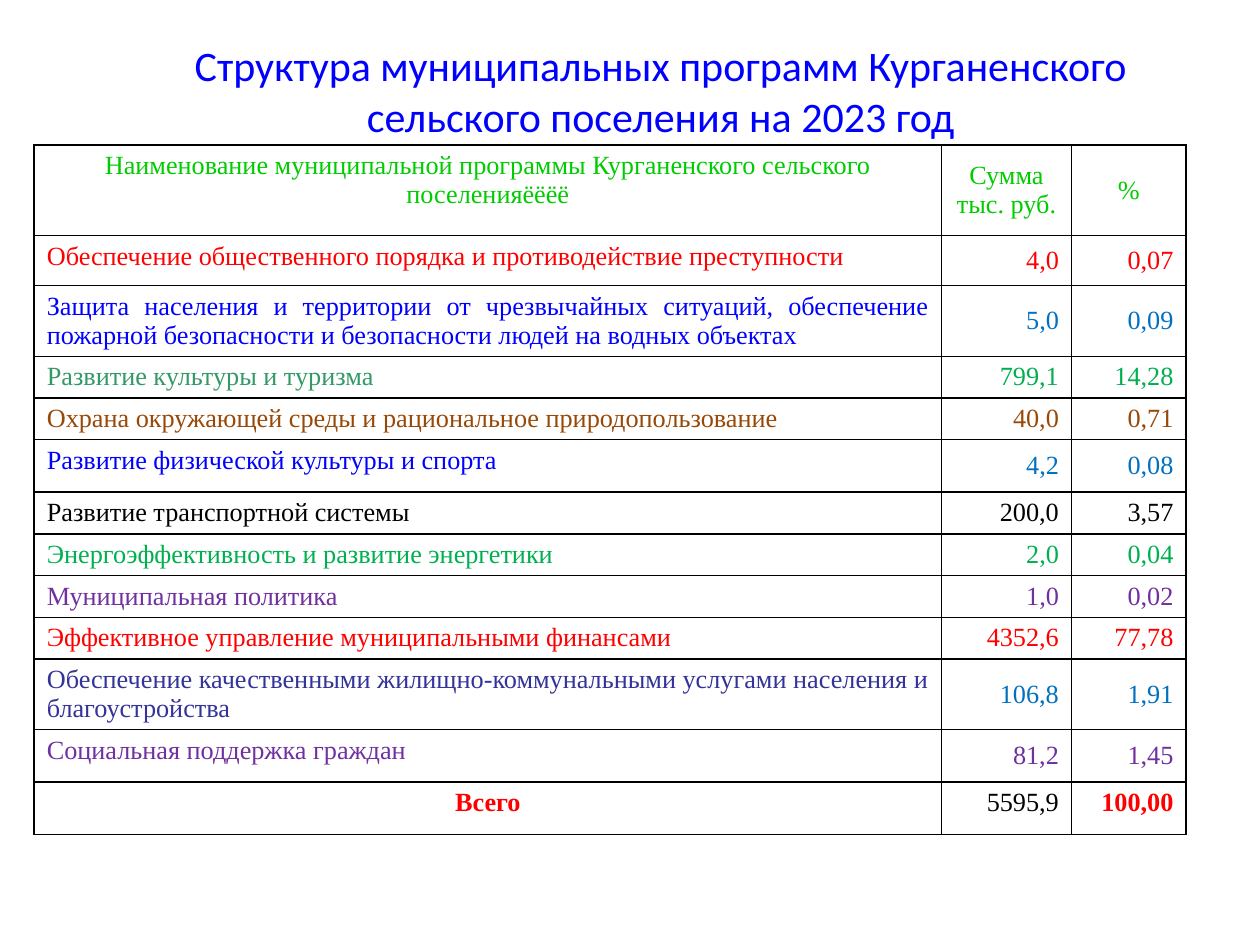
from lxml import etree
from pptx import Presentation
from pptx.dml.color import RGBColor
from pptx.enum.text import MSO_ANCHOR, PP_ALIGN
from pptx.oxml.ns import qn
from pptx.util import Cm, Pt

LEFT, CENTER, RIGHT, JUSTIFY = PP_ALIGN.LEFT, PP_ALIGN.CENTER, PP_ALIGN.RIGHT, PP_ALIGN.JUSTIFY
TOP, MIDDLE = MSO_ANCHOR.TOP, MSO_ANCHOR.MIDDLE

COLORS = {
    "blue": "0000FF", "lime": "00CC00", "red": "FF0000", "azure": "0070C0",
    "sea": "339966", "green": "00B050", "brown": "984807", "black": "000000",
    "purple": "7030A0", "indigo": "333399",
}

PROGRAMS = [
    ("Обеспечение общественного порядка и противодействие преступности", "4,0", "0,07", "red", "red", 1.01),
    ("Защита населения и территории от чрезвычайных ситуаций, обеспечение пожарной безопасности "
     "и безопасности людей на водных объектах", "5,0", "0,09", "blue", "azure", 1.42),
    ("Развитие культуры и туризма", "799,1", "14,28", "sea", "green", 0.84),
    ("Охрана окружающей среды и рациональное природопользование", "40,0", "0,71", "brown", "brown", 0.84),
    ("Развитие физической культуры и спорта", "4,2", "0,08", "blue", "azure", 1.06),
    ("Развитие транспортной системы", "200,0", "3,57", "black", "black", 0.84),
    ("Энергоэффективность и развитие энергетики", "2,0", "0,04", "green", "green", 0.84),
    ("Муниципальная политика", "1,0", "0,02", "purple", "purple", 0.84),
    ("Эффективное управление муниципальными финансами", "4352,6", "77,78", "red", "red", 0.84),
    ("Обеспечение качественными жилищно-коммунальными услугами населения и благоустройства",
     "106,8", "1,91", "indigo", "azure", 1.42),
    ("Социальная поддержка граждан", "81,2", "1,45", "purple", "purple", 1.06),
]


def write(frame, text, align, color, **font_values):
    para = frame.paragraphs[0]
    para.alignment = align
    span = para.add_run()
    span.text = text
    for name, value in font_values.items():
        setattr(span.font, name, value)
    span.font.color.rgb = RGBColor.from_string(COLORS[color])


def add_borders(cell):
    properties = cell._tc.get_or_add_tcPr()
    for side in ("lnL", "lnR", "lnT", "lnB"):
        line = etree.SubElement(properties, qn(f"a:{side}"), w=str(Pt(1)))
        fill = etree.SubElement(line, qn("a:solidFill"))
        etree.SubElement(fill, qn("a:srgbClr"), val=COLORS["black"])


deck = Presentation()
deck.slide_width, deck.slide_height = Cm(25.4), Cm(19.05)
page = deck.slides.add_slide(deck.slide_layouts[5])

title = page.shapes.title
title.left, title.top, title.width, title.height = Cm(2.54), Cm(0.71), Cm(21.56), Cm(2.21)
title.text_frame.word_wrap = True
title.text_frame.vertical_anchor = MIDDLE
write(title.text_frame, "Структура муниципальных программ Курганенского сельского поселения на 2023 год",
      CENTER, "blue", size=Pt(24), name="Calibri")

rows = [(1.83, [
    ("Наименование муниципальной программы Курганенского сельского поселенияёёёё", CENTER, TOP, "lime", False),
    ("Сумма тыс. руб.", CENTER, MIDDLE, "lime", False),
    ("%", CENTER, MIDDLE, "lime", False),
])]
for program, amount, share, program_color, value_color, height in PROGRAMS:
    rows.append((height, [
        (program, JUSTIFY, TOP, program_color, False),
        (amount, RIGHT, MIDDLE, value_color, False),
        (share, RIGHT, MIDDLE, value_color, False),
    ]))
rows.append((1.06, [
    ("Всего", CENTER, TOP, "red", True),
    ("5595,9", RIGHT, TOP, "black", False),
    ("100,00", RIGHT, TOP, "red", True),
]))

widths = [18.29, 2.62, 2.31]
total_height = sum(height for height, cells in rows)
table = page.shapes.add_table(len(rows), len(widths), Cm(0.69), Cm(2.92),
                              Cm(sum(widths)), Cm(total_height)).table
table.first_row = False
table.horz_banding = False
for column, width in zip(table.columns, widths):
    column.width = Cm(width)

for row, (height, cells) in zip(table.rows, rows):
    row.height = Cm(height)
    for cell, (text, align, anchor, color, bold) in zip(row.cells, cells):
        add_borders(cell)
        cell.fill.background()
        cell.vertical_anchor = anchor
        write(cell.text_frame, text, align, color, size=Pt(15), name="Times New Roman", bold=bold)

deck.save("out.pptx")
